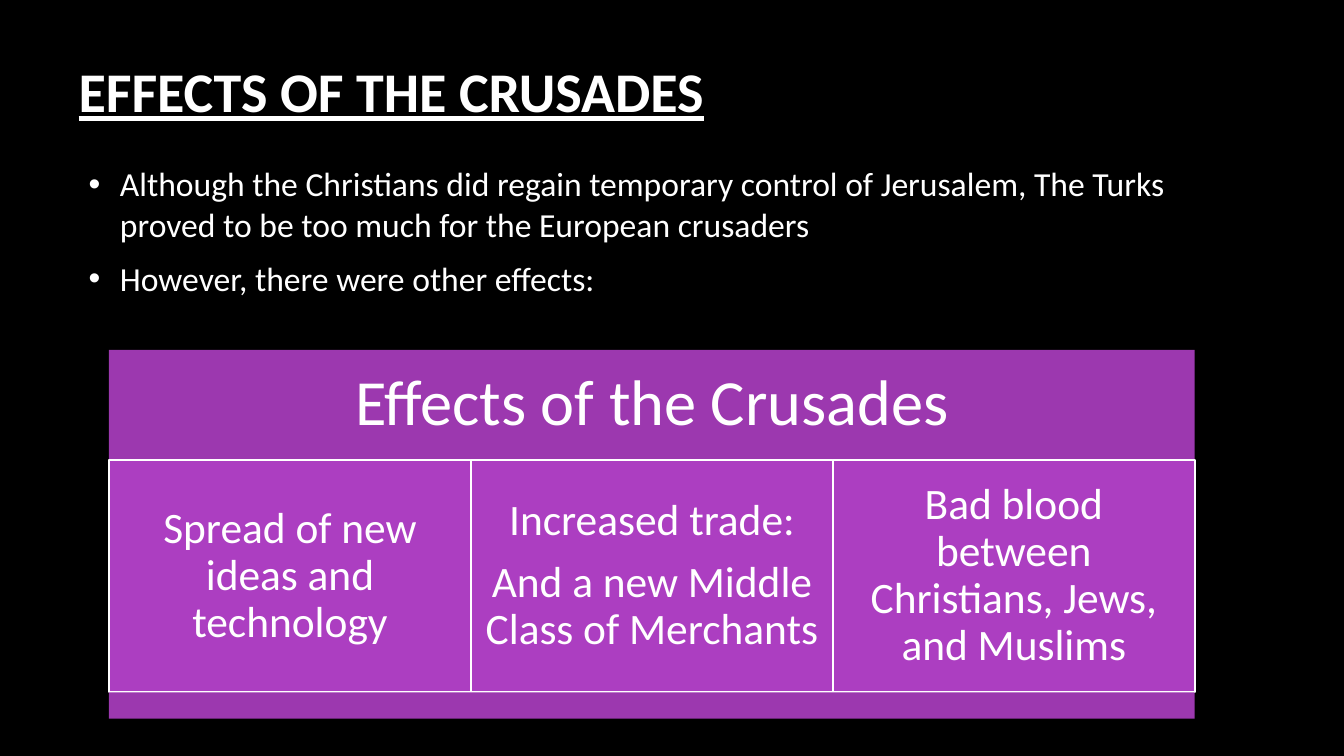
from pptx import Presentation
from pptx.dml.color import RGBColor
from pptx.enum.shapes import MSO_SHAPE as Kind
from pptx.enum.text import MSO_ANCHOR as Anchor, MSO_AUTO_SIZE as Fit, PP_ALIGN as Align
from pptx.util import Inches, Pt

TITLE = "EFFECTS OF THE CRUSADES"
POINTS = [
    "Although the Christians did regain temporary control of Jerusalem, "
    "The Turks proved to be too much for the European crusaders",
    "However, there were other effects:",
]
HEAD = "Effects of the Crusades"
CELLS = [
    "Spread of new ideas and technology",
    "Increased trade:\nAnd a new Middle Class of Merchants",
    "Bad blood between Christians, Jews, and Muslims",
]
WHITE, DARK, LIGHT = "FFFFFF", "9C38AF", "AC3EC1"
LEFT, WIDE = 1.08, 10.77
TOP, MID, LOW, END = 3.47, 4.56, 6.87, 7.13


def paint(target, color):
    if hasattr(target, "solid"):
        target.solid()
        target = target.fore_color
    target.rgb = RGBColor.from_string(color)


def style(frame, size, align, after=0, line=1.0, bold=None):
    for para in frame.paragraphs:
        para.alignment = align
        para.space_before = Pt(0)
        para.space_after = Pt(after)
        para.line_spacing = line
        for run in para.runs:
            font = run.font
            font.name, font.size = "Calibri", Pt(size)
            font.bold = font.underline = bold
            paint(font.color, WHITE)


def place(shape, left, top, width, height):
    shape.left, shape.top = Inches(left), Inches(top)
    shape.width, shape.height = Inches(width), Inches(height)


def block(left, top, width, height, color, text="", size=31, pad=0.13):
    box = slide.shapes.add_shape(
        Kind.RECTANGLE, Inches(left), Inches(top), Inches(width), Inches(height))
    box.shadow.inherit = False
    paint(box.fill, color)
    if color == LIGHT:
        paint(box.line.color, WHITE)
        box.line.width = Pt(1.5)
    else:
        box.line.fill.background()
    if text:
        frame = box.text_frame
        frame.text = text
        frame.word_wrap = True
        frame.vertical_anchor = Anchor.MIDDLE
        frame.margin_left = frame.margin_right = Inches(pad)
        frame.margin_top = frame.margin_bottom = Inches(pad)
        style(frame, size, Align.CENTER, 11, 0.9)


deck = Presentation()
deck.slide_width, deck.slide_height = Inches(13.33), Inches(7.5)
slide = deck.slides.add_slide(deck.slide_layouts[1])
paint(slide.background.fill, "000000")

title, body = slide.placeholders
place(title, 0.68, 0.1, 11.08, 1.59)
frame = title.text_frame
frame.text = TITLE
frame.auto_size = Fit.NONE
frame.vertical_anchor = Anchor.MIDDLE
style(frame, 40, Align.LEFT, bold=True)

place(body, 0.78, 1.09, 11.08, 3.99)
frame = body.text_frame
frame.text = "\n".join(POINTS)
frame.auto_size = Fit.NONE
frame.vertical_anchor = Anchor.TOP
frame.margin_top = Inches(0.53)
style(frame, 24, Align.LEFT, 10)
for para in frame.paragraphs:
    props = para._p.get_or_add_pPr()
    props.set("marL", str(Inches(0.31)))
    props.set("indent", str(-Inches(0.31)))

block(LEFT, TOP, WIDE, MID - TOP, DARK, HEAD, 46, 0.19)
step = WIDE / len(CELLS)
for col, text in enumerate(CELLS):
    block(LEFT + col * step, MID, step, LOW - MID, LIGHT, text)
block(LEFT, LOW, WIDE, END - LOW, DARK)

deck.save("out.pptx")
